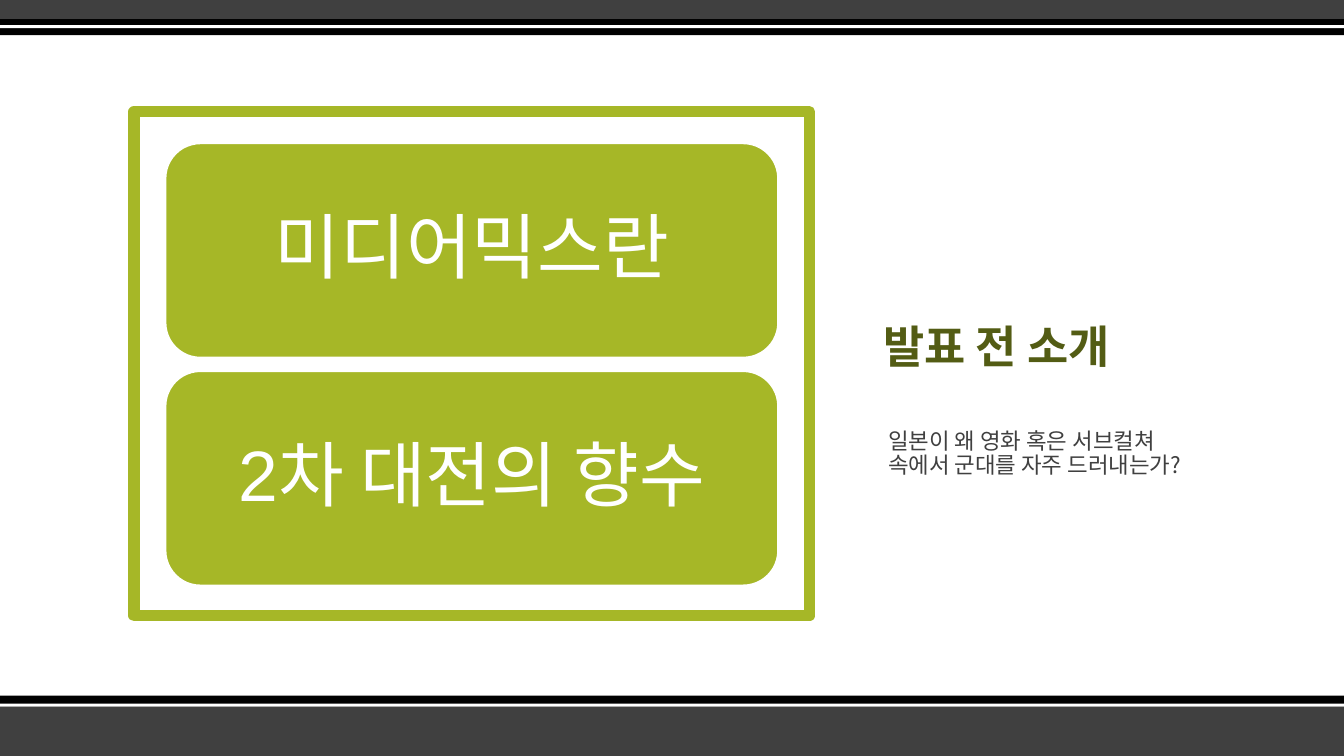
from dataclasses import dataclass

from lxml import etree
from pptx import Presentation
from pptx import util as u
from pptx.dml.color import RGBColor
from pptx.enum import shapes, text
from pptx.oxml.ns import qn


@dataclass(frozen=True)
class Theme:
    green: str = "A6B727"
    dark_green: str = "535C14"
    gray: str = "404040"
    black: str = "000000"
    white: str = "FFFFFF"
    latin: str = "Arial"
    korean: str = "Noto Sans CJK KR"
    card_size: int = 51
    title_size: int = 32
    body_size: int = 16


@dataclass(frozen=True)
class Box:
    left: float
    top: float
    width: float
    height: float

    def lengths(self) -> list[u.Length]:
        return [u.Inches(v) for v in (self.left, self.top, self.width, self.height)]


@dataclass(frozen=True)
class Band:
    top: float
    height: float
    color: str


@dataclass(frozen=True)
class Label:
    words: str
    size: int
    color: str
    font: str
    bold: bool = False
    align: text.PP_ALIGN = text.PP_ALIGN.LEFT
    anchor: text.MSO_ANCHOR = text.MSO_ANCHOR.TOP
    before: int = 0


T = Theme()
WIDTH, HEIGHT = 13.33, 7.5

BANDS = [
    Band(7, 0.5, T.gray),
    Band(6.9, 0.11, T.black),
    Band(6.98, 0.03, T.white),
    Band(0, 0.19, T.gray),
    Band(0.19, 0.16, T.black),
    Band(0.25, 0.03, T.white),
]
FRAME = Box(1.33, 1.11, 6.7, 5)
CARDS = ["미디어믹스란", "2차 대전의 향수"]
CARD = Box(1.63, 1.41, 6.1, 2.15)
CARD_PITCH = 2.26
SIDE_TEXTS = [
    (Box(8.66, 1.5, 3.42, 2.25),
     Label("발표 전 소개", T.title_size, T.dark_green, T.korean, bold=True,
           anchor=text.MSO_ANCHOR.BOTTOM)),
    (Box(8.71, 4.22, 3.42, 1.97),
     Label("일본이 왜 영화 혹은 서브컬쳐 속에서 군대를 자주 드러내는가?",
           T.body_size, T.gray, T.korean, before=8)),
]


def rgb(color: str) -> RGBColor:
    return RGBColor.from_string(color)


def add_box(s, kind, box: Box, fill: str | None = None,
            line: str | None = None, weight: float = 0):
    """Draw a preset shape; a missing fill or line is left empty."""
    sp = s.shapes.add_shape(kind, *box.lengths())
    sp.shadow.inherit = False
    if fill:
        sp.fill.solid()
        sp.fill.fore_color.rgb = rgb(fill)
    else:
        sp.fill.background()
    if line:
        sp.line.color.rgb = rgb(line)
        sp.line.width = u.Pt(weight)
    else:
        sp.line.fill.background()
    return sp


def write(sp, label: Label) -> None:
    tf = sp.text_frame
    tf.word_wrap = True
    tf.vertical_anchor = label.anchor
    p = tf.paragraphs[0]
    p.alignment = label.align
    p.line_spacing = 0.9
    p.space_before = u.Pt(label.before)
    r = p.add_run()
    r.text = label.words
    r.font.size = u.Pt(label.size)
    r.font.bold = label.bold
    r.font.color.rgb = rgb(label.color)
    r.font.name = label.font
    ea = etree.SubElement(r.font._element, qn("a:ea"))
    ea.set("typeface", T.korean)


def add_card(s, box: Box, words: str) -> None:
    sp = add_box(s, shapes.MSO_SHAPE.ROUNDED_RECTANGLE, box, T.green, T.white, 3)
    tf = sp.text_frame
    tf.margin_left = tf.margin_right = u.Inches(0.21)
    tf.margin_top = tf.margin_bottom = u.Inches(0.11)
    write(sp, Label(words, T.card_size, T.white, T.latin,
                    align=text.PP_ALIGN.CENTER, anchor=text.MSO_ANCHOR.MIDDLE))


def main() -> None:
    prs = Presentation()
    prs.slide_width, prs.slide_height = u.Inches(WIDTH), u.Inches(HEIGHT)
    s = prs.slides.add_slide(prs.slide_layouts[6])
    s.background.fill.solid()
    s.background.fill.fore_color.rgb = rgb(T.white)

    for band in BANDS:
        add_box(s, shapes.MSO_SHAPE.RECTANGLE,
                Box(0, band.top, WIDTH, band.height), band.color)
    add_box(s, shapes.MSO_SHAPE.RECTANGLE, FRAME, line=T.green, weight=8)
    for box, label in SIDE_TEXTS:
        write(s.shapes.add_textbox(*box.lengths()), label)
    for i, words in enumerate(CARDS):
        add_card(s, Box(CARD.left, CARD.top + i * CARD_PITCH, CARD.width, CARD.height), words)

    prs.save("out.pptx")


if __name__ == "__main__":
    main()
